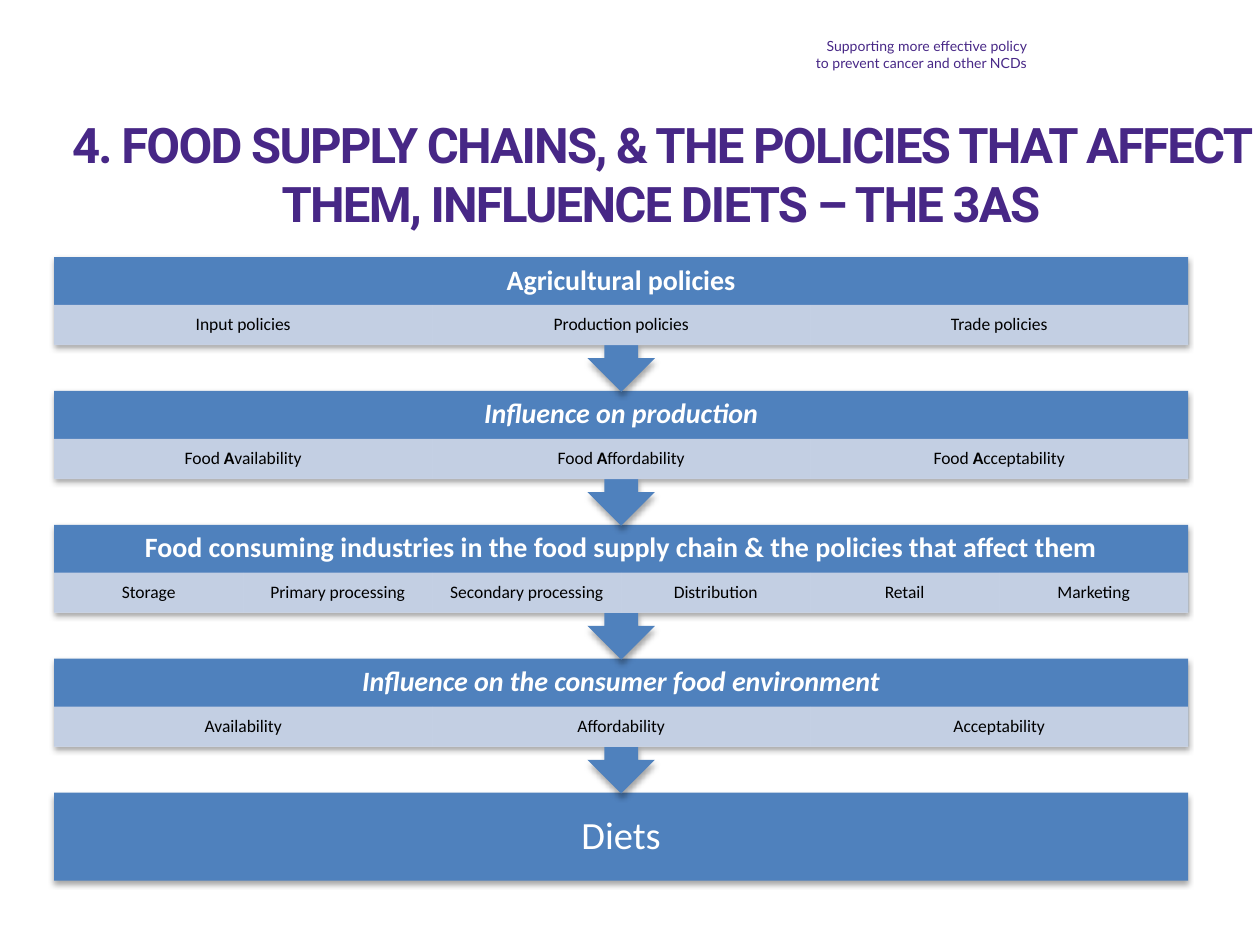
"""Build a slide showing how policies flow through food supply chains to diets."""
from lxml import etree
from pptx import Presentation
from pptx.dml.color import RGBColor
from pptx.enum.shapes import MSO_SHAPE as Shape
from pptx.enum.text import MSO_ANCHOR as Anchor, PP_ALIGN as Align
from pptx.oxml.ns import qn
from pptx.util import Inches, Pt

COLORS = {"purple": "472786", "blue": "4F81BD", "pale": "D0D8E8",
          "white": "FFFFFF", "black": "000000"}
TAGLINE = "Supporting more effective policy to prevent cancer and other NCDs"
TITLE = "4. FOOD SUPPLY CHAINS, & THE POLICIES THAT AFFECT THEM, INFLUENCE DIETS – THE 3AS"
OUTCOME = "Diets"
STAGES = [
    {"heading": "Agricultural policies", "italic": False,
     "cells": [["Input policies"], ["Production policies"], ["Trade policies"]]},
    {"heading": "Influence on production", "italic": True,
     "cells": [["Food ", "A", "vailability"], ["Food ", "A", "ffordability"],
               ["Food ", "A", "cceptability"]]},
    {"heading": "Food consuming industries in the food supply chain & the policies that affect them",
     "italic": False,
     "cells": [["Storage"], ["Primary processing"], ["Secondary processing"],
               ["Distribution"], ["Retail"], ["Marketing"]]},
    {"heading": "Influence on the consumer food environment", "italic": True,
     "cells": [["Availability"], ["Affordability"], ["Acceptability"]]},
]
LEFT, WIDTH = 0.43, 9
TOP, OUTCOME_TOP = 2.04, 6.29
PITCH = (OUTCOME_TOP - TOP) / len(STAGES)
CALLOUT_HEIGHT, OUTCOME_HEIGHT = 1.07, 0.7
HEADING_HEIGHT, CELL_HEIGHT = 0.38, 0.32


def write(shape, runs, size, color, font="Calibri", bold=False, italic=False,
          align=Align.CENTER, spacing=0.9):
    """Write runs in one paragraph; every second run is bold."""
    frame = shape.text_frame
    frame.word_wrap = True
    paragraph = frame.paragraphs[0]
    paragraph.alignment = align
    paragraph.line_spacing = spacing
    for index, text in enumerate(runs):
        run = paragraph.add_run()
        run.text = text
        run.font.name = font
        run.font.size = Pt(size)
        run.font.bold = bold or index % 2 == 1
        run.font.italic = italic
        run.font.color.rgb = RGBColor.from_string(COLORS[color])
    return paragraph


def center(shape):
    """Centre the text vertically without insets."""
    frame = shape.text_frame
    frame.vertical_anchor = Anchor.MIDDLE
    frame.margin_left = frame.margin_right = 0
    frame.margin_top = frame.margin_bottom = 0


def add_textbox(slide, left, top, width, height):
    """Add an empty text box."""
    return slide.shapes.add_textbox(Inches(left), Inches(top), Inches(width), Inches(height))


def add_block(slide, kind, left, top, width, height, color):
    """Add a filled shape without outline or shadow."""
    shape = slide.shapes.add_shape(kind, Inches(left), Inches(top), Inches(width), Inches(height))
    shape.shadow.inherit = False
    shape.fill.solid()
    shape.fill.fore_color.rgb = RGBColor.from_string(COLORS[color])
    shape.line.fill.background()
    center(shape)
    return shape


def add_shadow(shape):
    """Give the shape a soft shadow below it."""
    effects = shape._element.spPr.find(qn("a:effectLst"))
    shadow = etree.SubElement(effects, qn("a:outerShdw"), blurRad=str(Pt(3.1)),
                              dist=str(Pt(1.8)), dir="5400000", rotWithShape="0")
    color = etree.SubElement(shadow, qn("a:srgbClr"), val=COLORS["black"])
    etree.SubElement(color, qn("a:alpha"), val="35000")


def add_stage(slide, stage, top):
    """Add a callout with its heading and its row of cells."""
    callout = add_block(slide, Shape.UP_ARROW_CALLOUT, LEFT, top, WIDTH, CALLOUT_HEIGHT, "blue")
    callout.rotation = 180
    add_shadow(callout)
    heading = add_textbox(slide, LEFT, top, WIDTH, HEADING_HEIGHT)
    center(heading)
    write(heading, [stage["heading"]], 16, "white", bold=True, italic=stage["italic"])
    cell_width = WIDTH / len(stage["cells"])
    for column, runs in enumerate(stage["cells"]):
        cell = add_block(slide, Shape.RECTANGLE, LEFT + column * cell_width,
                         top + HEADING_HEIGHT, cell_width, CELL_HEIGHT, "pale")
        color = cell._element.spPr.find(qn("a:solidFill")).find(qn("a:srgbClr"))
        etree.SubElement(color, qn("a:alpha"), val="90000")
        write(cell, runs, 10, "black")


def main():
    """Assemble and save the slide."""
    presentation = Presentation()
    presentation.slide_width = Inches(10)
    presentation.slide_height = Inches(7.5)
    slide = presentation.slides.add_slide(presentation.slide_layouts[6])

    tagline = add_textbox(slide, 6.34, 0.25, 1.91, 0.37)
    write(tagline, [TAGLINE], 8, "purple", font="Lato", align=Align.RIGHT, spacing=1.0)
    title = add_textbox(slide, 0.42, 0.86, 9.65, 1.04)
    paragraph = write(title, [TITLE], 28, "purple", font="Roboto", bold=True, spacing=1.0)
    paragraph.runs[0].font._element.set("spc", "-100")

    outcome = add_block(slide, Shape.RECTANGLE, LEFT, OUTCOME_TOP, WIDTH, OUTCOME_HEIGHT, "blue")
    add_shadow(outcome)
    write(outcome, [OUTCOME], 22, "white")
    for row, stage in reversed(list(enumerate(STAGES))):
        add_stage(slide, stage, TOP + row * PITCH)

    presentation.save("out.pptx")


if __name__ == "__main__":
    main()
